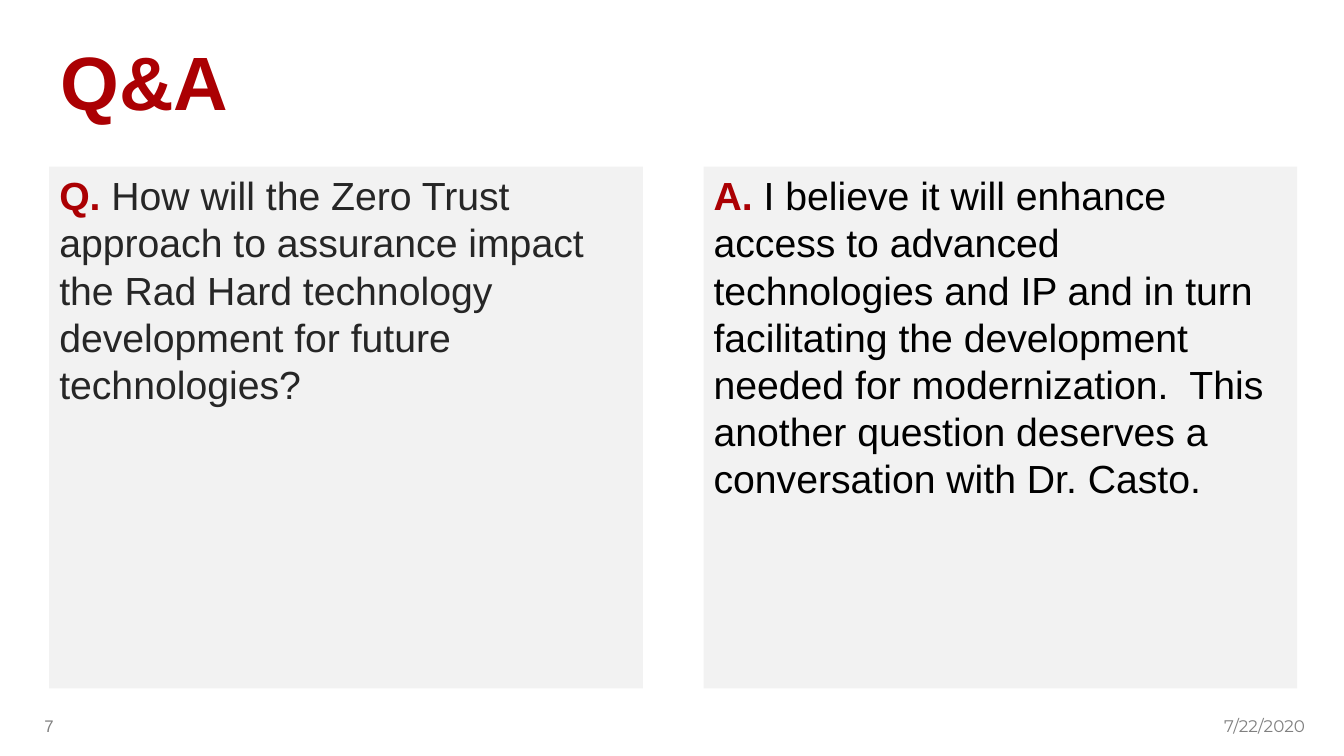
"""Build the Q&A slide with a question panel and an answer panel."""
from pptx import Presentation
from pptx.dml.color import RGBColor
from pptx.enum.text import MSO_ANCHOR as Anchor, MSO_AUTO_SIZE as Auto, PP_ALIGN as Align
from pptx.oxml.ns import qn
from pptx.util import Cm, Pt

RED, GREY, PANEL = "AB0003", "808080", "F2F2F2"
TITLE = "Q&A"
PANELS = [
    ("Q. ", "How will the Zero Trust approach to assurance impact the Rad Hard "
     "technology development for future technologies?", "262626"),
    ("A. ", "I believe it will enhance access to advanced technologies and IP and "
     "in turn facilitating the development needed for modernization.  This "
     "another question deserves a conversation with Dr. Casto.", "000000"),
]
FOOT = [
    ("7/22/2020", 24.28, 8.86, Align.RIGHT, "Montserrat"),
    ("7", 0.56, 1.35, Align.CENTER, "Arial"),
]
LEFT, TOP, WIDE, HIGH, STEP = 1.24, 4.2, 14.96, 13.15, 16.49


def style(font, size, color, bold=False, name="Arial"):
    font.name, font.size, font.bold = name, Pt(size), bold
    font.color.rgb = RGBColor.from_string(color)


def place(shape, left, top, width, height):
    shape.left, shape.top = Cm(left), Cm(top)
    shape.width, shape.height = Cm(width), Cm(height)


def fill_panel(shape, col, label, text, color):
    place(shape, LEFT + col * STEP, TOP, WIDE, HIGH)
    shape.fill.solid()
    shape.fill.fore_color.rgb = RGBColor.from_string(PANEL)
    frame = shape.text_frame
    frame.auto_size = Auto.NONE
    para = frame.paragraphs[0]
    props = para._p.get_or_add_pPr()
    props.set("marL", "0")
    props.set("indent", "0")
    props.append(props.makeelement(qn("a:buNone"), {}))
    para.space_before = Pt(0)
    for words, tint, bold in ((label, RED, True), (text, color, False)):
        run = para.add_run()
        run.text = words
        style(run.font, 28, tint, bold)


def add_foot(slide, text, left, width, align, name):
    box = slide.shapes.add_textbox(Cm(left), Cm(17.78), Cm(width), Cm(1.02))
    frame = box.text_frame
    frame.word_wrap = True
    frame.vertical_anchor = Anchor.MIDDLE
    para = frame.paragraphs[0]
    para.text, para.alignment = text, align
    style(para.font, 12, GREY, name=name)


def main():
    deck = Presentation()
    deck.slide_width, deck.slide_height = Cm(33.87), Cm(19.05)
    slide = deck.slides.add_slide(deck.slide_layouts[3])
    title, *bodies = slide.placeholders
    for col, (body, panel) in enumerate(zip(bodies, PANELS)):
        fill_panel(body, col, *panel)
    for item in FOOT:
        add_foot(slide, *item)
    place(title, 1.27, 0.86, 8.46, 2.34)
    title.text_frame.auto_size = Auto.NONE
    title.text_frame.vertical_anchor = Anchor.MIDDLE
    para = title.text_frame.paragraphs[0]
    para.text, para.alignment = TITLE, Align.LEFT
    style(para.font, 54, RED, True)
    deck.save("out.pptx")


if __name__ == "__main__":
    main()
